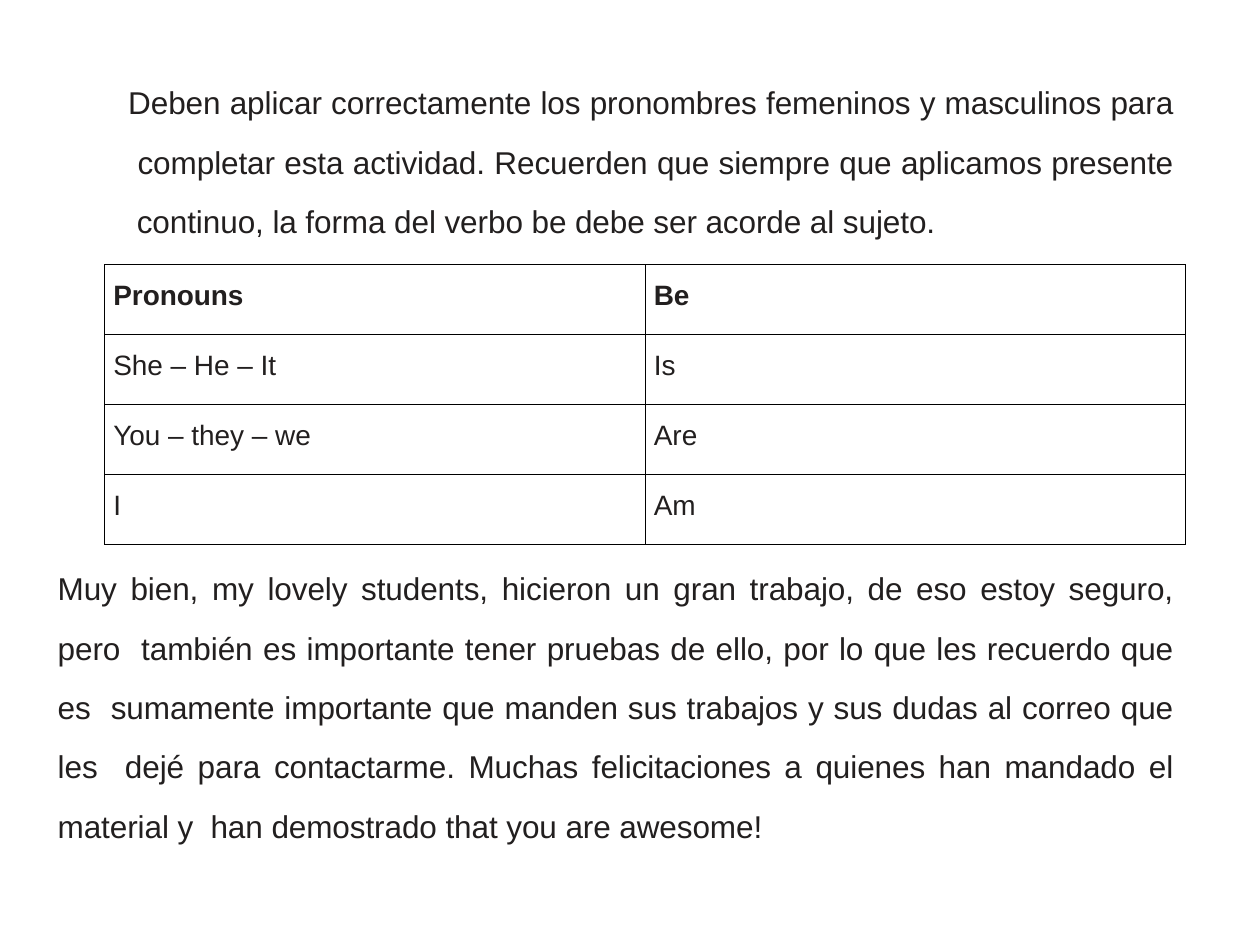
from lxml.etree import SubElement
from pptx import Presentation
from pptx.dml.color import RGBColor
from pptx.enum.text import MSO_ANCHOR, MSO_AUTO_SIZE, PP_ALIGN
from pptx.oxml.ns import qn
from pptx.util import Inches, Pt

INTRO = (
    "Deben aplicar correctamente los pronombres femeninos y masculinos para "
    " completar esta actividad. Recuerden que siempre que aplicamos presente "
    " continuo, la forma del verbo be debe ser acorde al sujeto."
)
PRONOUNS = [
    ("Pronouns", "Be"),
    ("She – He – It", "Is"),
    ("You – they – we", "Are"),
    ("I", "Am"),
]
CLOSING = (
    "Muy bien, my lovely students, hicieron un gran trabajo, de eso estoy seguro, "
    "pero  también es importante tener pruebas de ello, por lo que les recuerdo que "
    "es  sumamente importante que manden sus trabajos y sus dudas al correo que "
    "les  dejé para contactarme. Muchas felicitaciones a quienes han mandado el "
    "material y  han demostrado that you are awesome!"
)


def color(value):
    return RGBColor.from_string(value)


class Page:
    font_name = "Arial"
    ink = "221F1F"
    border = "000000"

    def __init__(self, deck):
        self.slide = deck.slides.add_slide(deck.slide_layouts[6])

    def style(self, para, size, bold=False):
        font = para.font
        font.name, font.size, font.bold = self.font_name, Pt(size), bold
        font.color.rgb = color(self.ink)

    def paragraph(self, text, left, top, width, height):
        box = self.slide.shapes.add_textbox(
            Inches(left), Inches(top), Inches(width), Inches(height))
        frame = box.text_frame
        frame.word_wrap = True
        frame.auto_size = MSO_AUTO_SIZE.SHAPE_TO_FIT_TEXT
        para = frame.paragraphs[0]
        span = para.add_run()
        span.text = text
        # Slightly tightened letters, in hundredths of a point
        span.font._element.set("spc", "-5")
        para.alignment = PP_ALIGN.JUSTIFY
        para.line_spacing = 1.57
        para._p.get_or_add_pPr().set("marL", str(Inches(0.01)))
        self.style(para, 18)

    def table(self, rows, left, top, width, height):
        frame = self.slide.shapes.add_table(
            len(rows), len(rows[0]),
            Inches(left), Inches(top), Inches(width), Inches(height))
        table = frame.table
        table.horz_banding = False
        for row_index, row in enumerate(rows):
            for column_index, text in enumerate(row):
                cell = table.cell(row_index, column_index)
                cell.text = text
                cell.vertical_anchor = MSO_ANCHOR.MIDDLE
                cell.margin_left = Inches(0.07)
                cell.margin_right = cell.margin_top = 0
                cell.margin_bottom = Inches(0.06)
                self.style(cell.text_frame.paragraphs[0], 16, bold=row_index == 0)
                self.outline(cell)
                cell.fill.background()

    def outline(self, cell):
        properties = cell._tc.get_or_add_tcPr()
        for side in ("a:lnL", "a:lnR", "a:lnT", "a:lnB"):
            line = SubElement(properties, qn(side), w=str(Pt(0.5)))
            fill = SubElement(line, qn("a:solidFill"))
            SubElement(fill, qn("a:srgbClr"), val=self.border)


def main():
    deck = Presentation()
    deck.slide_width, deck.slide_height = Inches(10), Inches(7.5)
    page = Page(deck)
    page.paragraph(INTRO, 0.91, 0.44, 8.5, 1.41)
    page.table(PRONOUNS, 0.83, 2.1, 8.58, 2.22)
    page.paragraph(CLOSING, 0.35, 4.3, 9.06, 2.37)
    deck.save("out.pptx")


if __name__ == "__main__":
    main()
